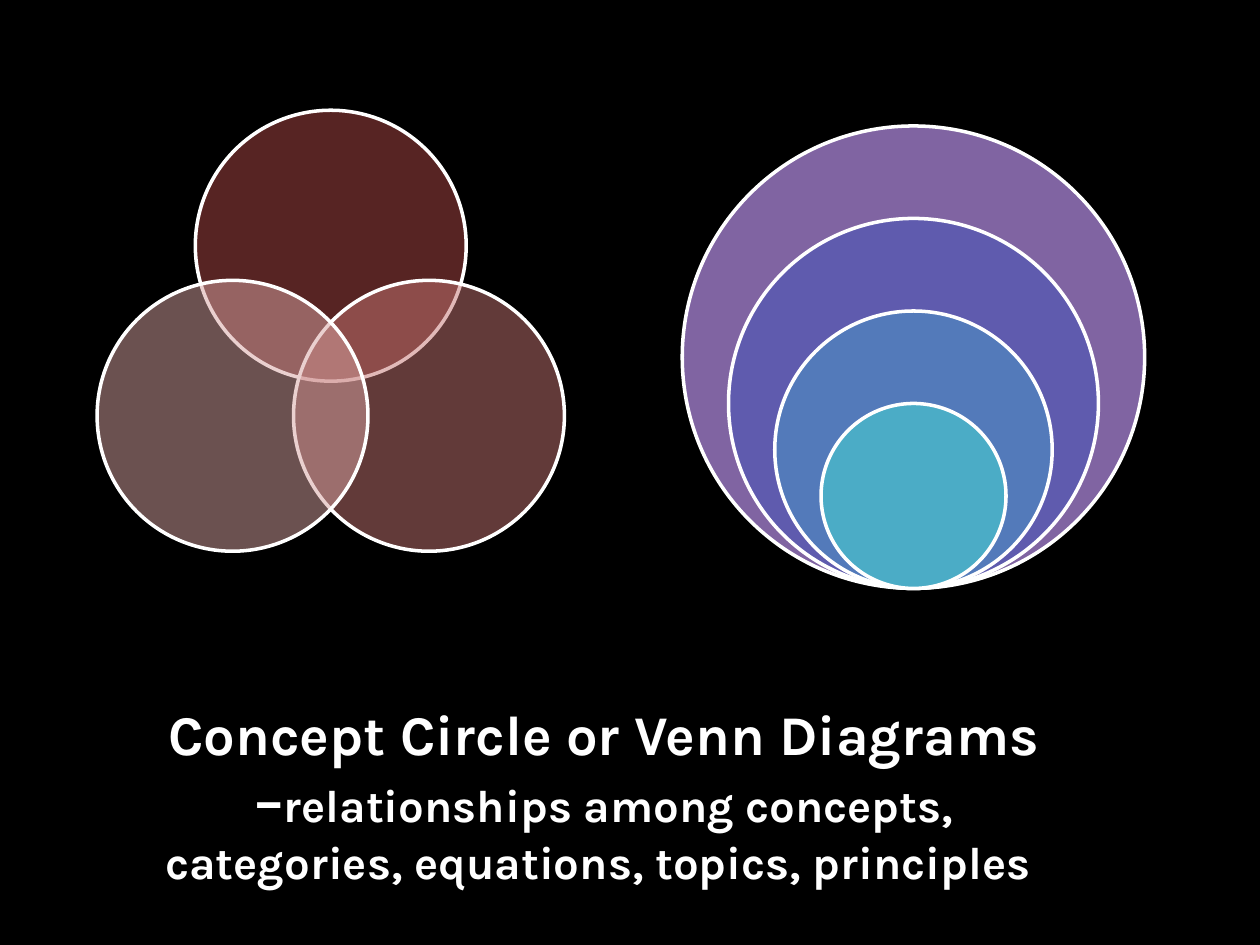
from dataclasses import dataclass
from math import cos, radians, sin

from lxml import etree
from pptx import Presentation
from pptx import util as u
from pptx.dml.color import RGBColor
from pptx.enum import shapes, text
from pptx.oxml import ns
from pptx.shapes.group import GroupShape
from pptx.slide import Slide


@dataclass(frozen=True)
class Theme:
    background: str = "000000"
    ink: str = "FFFFFF"
    venn: tuple[str, ...] = ("AE4946", "C47472", "D6A2A1")
    nested: tuple[str, ...] = ("8064A2", "5F5BAE", "537ABA", "4BACC6")
    font: str = "Karla"
    heading_size: int = 32
    body_size: int = 26
    outline: int = 2
    venn_opacity: int = 50


@dataclass(frozen=True)
class Circle:
    center_x: float
    center_y: float
    diameter: float
    color: str
    opacity: int = 100


THEME = Theme()
WIDTH, HEIGHT = 10, 7.5


def venn_circles() -> list[Circle]:
    center_x, center_y = WIDTH * 0.2625, HEIGHT * 0.38
    diameter, offset = 2.15, 0.9
    return [
        Circle(
            center_x + offset * cos(radians(angle)),
            center_y + offset * sin(radians(angle)),
            diameter,
            color,
            THEME.venn_opacity,
        )
        for angle, color in zip((-90, 30, 150), THEME.venn)
    ]


def nested_circles() -> list[Circle]:
    center_x, bottom = WIDTH * 0.725, 4.67
    largest, step = 3.67, 0.2
    diameters = [largest * (1 - step * level) for level in range(len(THEME.nested))]
    return [
        Circle(center_x, bottom - diameter / 2, diameter, color)
        for diameter, color in zip(diameters, THEME.nested)
    ]


def draw_circle(group: GroupShape, circle: Circle) -> None:
    radius = circle.diameter / 2
    shape = group.shapes.add_shape(
        shapes.MSO_SHAPE.OVAL,
        u.Inches(circle.center_x - radius),
        u.Inches(circle.center_y - radius),
        u.Inches(circle.diameter),
        u.Inches(circle.diameter),
    )
    shape.shadow.inherit = False
    shape.fill.solid()
    shape.fill.fore_color.rgb = RGBColor.from_string(circle.color)
    shape.line.color.rgb = RGBColor.from_string(THEME.ink)
    shape.line.width = u.Pt(THEME.outline)
    if circle.opacity < 100:
        color = shape.fill._xPr.find(".//" + ns.qn("a:srgbClr"))
        etree.SubElement(color, ns.qn("a:alpha"), val=str(circle.opacity * 1000))


def draw_diagram(page: Slide, circles: list[Circle]) -> None:
    group = page.shapes.add_group_shape()
    for circle in circles:
        draw_circle(group, circle)


def write_title(page: Slide, spans: list[tuple[str, int]]) -> None:
    box = page.shapes.title
    box.left, box.top = u.Inches(1.17), u.Inches(5.5)
    box.width, box.height = u.Inches(7.25), u.Inches(1.51)
    frame = box.text_frame
    frame.word_wrap = True
    frame.auto_size = text.MSO_AUTO_SIZE.SHAPE_TO_FIT_TEXT
    frame.vertical_anchor = text.MSO_ANCHOR.TOP
    para = frame.paragraphs[0]
    para.alignment = text.PP_ALIGN.CENTER
    for words, size in spans:
        span = para.add_run()
        span.text = words
        span.font.name = THEME.font
        span.font.size = u.Pt(size)
        span.font.bold = True
        span.font.color.rgb = RGBColor.from_string(THEME.ink)


def main() -> None:
    deck = Presentation()
    deck.slide_width, deck.slide_height = u.Inches(WIDTH), u.Inches(HEIGHT)
    page = deck.slides.add_slide(deck.slide_layouts.get_by_name("Title Only"))
    page.background.fill.solid()
    page.background.fill.fore_color.rgb = RGBColor.from_string(THEME.background)
    draw_diagram(page, venn_circles())
    draw_diagram(page, nested_circles())
    write_title(
        page,
        [
            ("Concept Circle or Venn Diagrams –", THEME.heading_size),
            (
                "relationships among concepts, categories, equations, topics, principles ",
                THEME.body_size,
            ),
        ],
    )
    deck.save("out.pptx")


if __name__ == "__main__":
    main()
